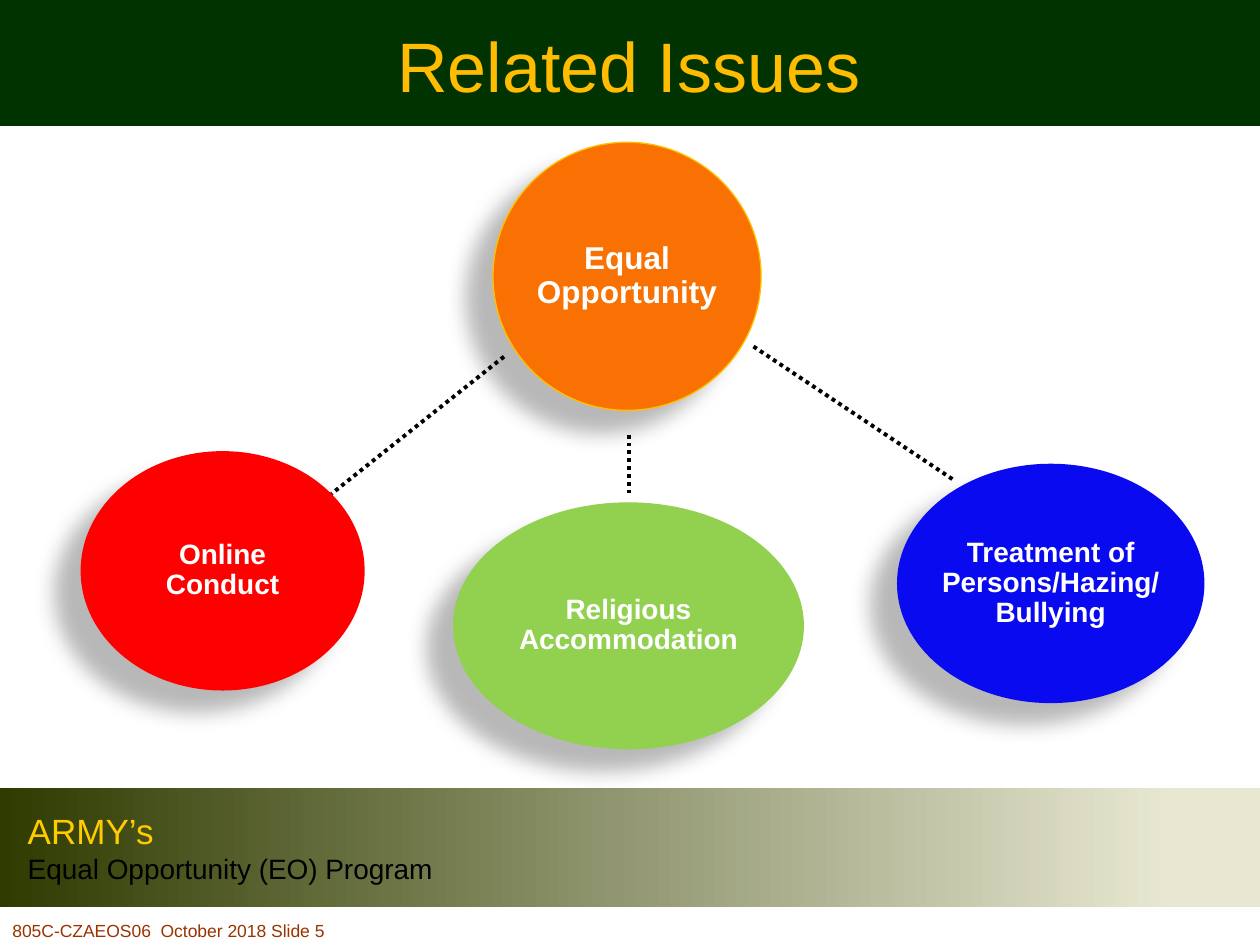
from lxml import etree
from pptx import Presentation
from pptx import util as u
from pptx.dml.color import RGBColor
from pptx.enum import dml, shapes, text
from pptx.oxml.ns import qn

Pt = u.Pt
COLORS = {
    "header": "003300", "title": "FFBC01", "band_dark": "2F3B01", "band_light": "E8E8D2",
    "army": "FFCC00", "black": "000000", "white": "FFFFFF", "footer": "993300",
    "red": "FF0000", "blue": "0A0AF0", "green": "92D050", "orange": "F87102", "gold": "FFC000",
}


def rgb(name):
    return RGBColor.from_string(COLORS[name])


def write(paragraph, words, size, color, bold=False):
    paragraph.text = words
    paragraph.font.name = "Arial"
    paragraph.font.size = Pt(size)
    paragraph.font.bold = bold
    paragraph.font.color.rgb = rgb(color)


presentation = Presentation()
presentation.slide_width, presentation.slide_height = Pt(720), Pt(540)
slide = presentation.slides.add_slide(presentation.slide_layouts[6])

# Header bar and program band
header = slide.shapes.add_shape(shapes.MSO_SHAPE.RECTANGLE, 0, 0, Pt(720), Pt(72))
band = slide.shapes.add_shape(shapes.MSO_SHAPE.RECTANGLE, 0, Pt(450), Pt(720), Pt(68.4))
for shape in (header, band):
    shape.shadow.inherit = False
    shape.line.fill.background()
header.fill.solid()
header.fill.fore_color.rgb = rgb("header")
band.fill.gradient()
band.fill.gradient_angle = 0
for stop, color, position in zip(band.fill.gradient_stops, ("band_dark", "band_light"), (0, 0.93)):
    stop.color.rgb = rgb(color)
    stop.position = position

frame = band.text_frame
frame.margin_left = Pt(15.84)
frame.vertical_anchor = text.MSO_ANCHOR.MIDDLE
write(frame.paragraphs[0], "ARMY’s", 20, "army")
write(frame.add_paragraph(), "Equal Opportunity (EO) Program", 16, "black")
for paragraph in frame.paragraphs:
    paragraph.alignment = text.PP_ALIGN.LEFT

# Title and footer
title = slide.shapes.add_textbox(Pt(129.6), Pt(2.9), Pt(459.4), Pt(67.7))
title.text_frame.word_wrap = True
title.text_frame.vertical_anchor = text.MSO_ANCHOR.MIDDLE
write(title.text_frame.paragraphs[0], "Related Issues", 40, "title")
title.text_frame.paragraphs[0].alignment = text.PP_ALIGN.CENTER

footer = slide.shapes.add_textbox(0, Pt(522), Pt(280.8), Pt(18))
footer.text_frame.word_wrap = True
write(footer.text_frame.paragraphs[0], "805C-CZAEOS06  October 2018 Slide 5", 10, "footer")

# Dotted links from the central issue to the related ones
links = [
    (359.3, 248.4, 359.3, 282.2),
    (430.6, 198, 545, 274.3),
    (288, 203.8, 189.4, 282.2),
]
for ends in links:
    link = slide.shapes.add_connector(shapes.MSO_CONNECTOR.STRAIGHT, *map(Pt, ends))
    link.line.color.rgb = rgb("black")
    link.line.width = Pt(2.25)
    link.line.dash_style = dml.MSO_LINE.ROUND_DOT
    etree.SubElement(link._element.spPr, qn("a:effectLst"))

# Issues: label, left, top, width, height, fill, outline, text size
issues = [
    ("Online Conduct", 46.1, 257.8, 162.3, 136.8, "red", None, 16),
    ("Treatment of Persons/Hazing/Bullying", 512.6, 265, 175.7, 136.8, "blue", None, 16),
    ("Religious Accommodation", 259.2, 287.4, 199.8, 140.4, "green", "green", 16),
    ("Equal Opportunity", 281.7, 81.3, 153.2, 153.2, "orange", "gold", 18),
]
for label, left, top, width, height, fill, outline, size in issues:
    issue = slide.shapes.add_shape(
        shapes.MSO_SHAPE.OVAL, Pt(left), Pt(top), Pt(width), Pt(height))
    issue.fill.solid()
    issue.fill.fore_color.rgb = rgb(fill)
    if outline:
        issue.line.color.rgb = rgb(outline)
        issue.line.width = Pt(0.75)
    else:
        issue.line.fill.background()

    issue.shadow.inherit = False
    effects = issue._element.spPr.find(qn("a:effectLst"))
    shadow = etree.SubElement(
        effects, qn("a:outerShdw"), blurRad=str(Pt(11.8)), dist=str(Pt(19.7)),
        dir=str(141 * 60000), algn="ctr", rotWithShape="0")
    shade = etree.SubElement(shadow, qn("a:srgbClr"), val=COLORS["black"])
    etree.SubElement(shade, qn("a:alpha"), val="28000")

    frame = issue.text_frame
    frame.word_wrap = True
    frame.margin_left = frame.margin_right = frame.margin_top = frame.margin_bottom = 0
    frame.vertical_anchor = text.MSO_ANCHOR.MIDDLE
    paragraph = frame.paragraphs[0]
    write(paragraph, label, size, "white", bold=True)
    paragraph.alignment = text.PP_ALIGN.CENTER
    paragraph.line_spacing = 0.9

presentation.save("out.pptx")
